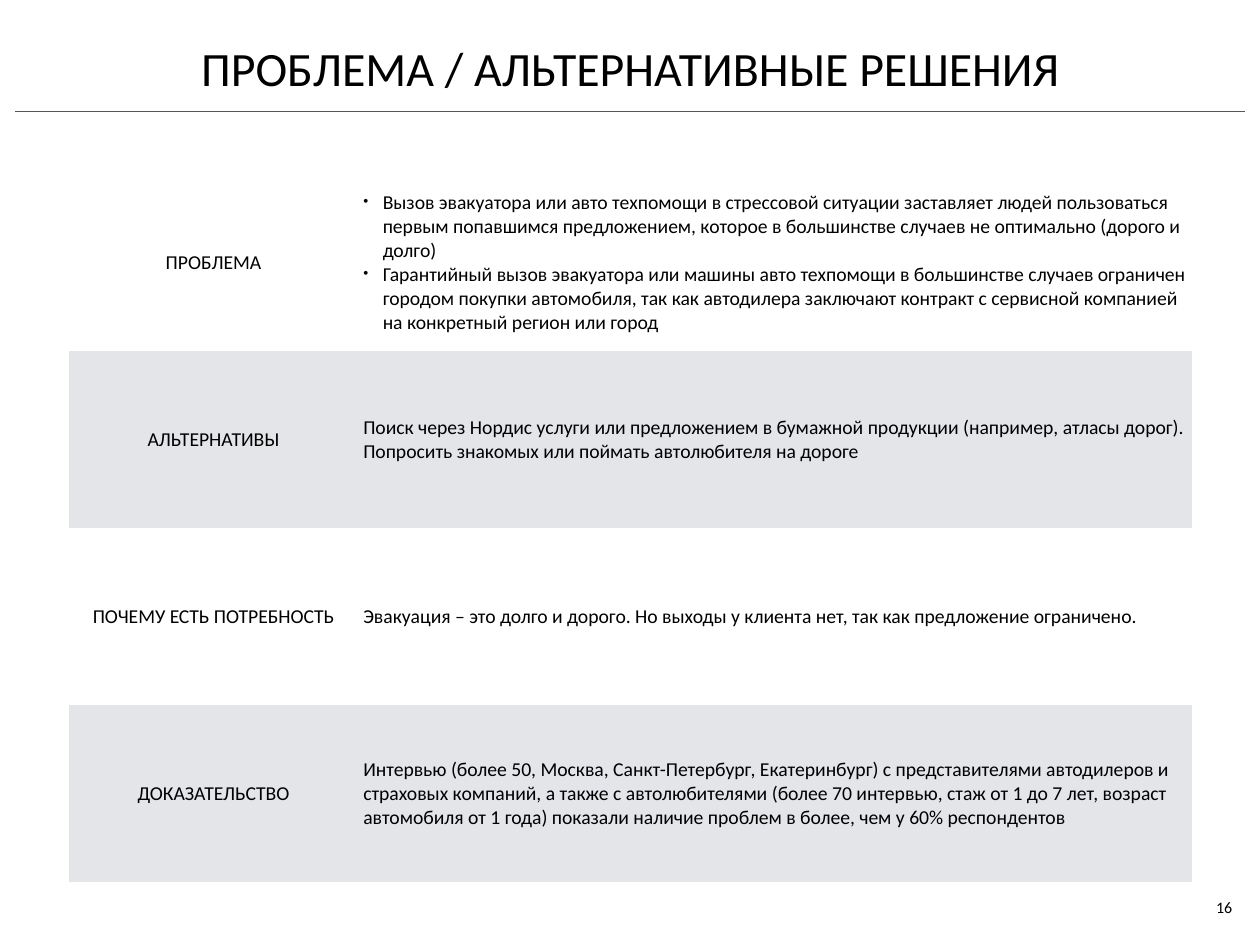
from dataclasses import dataclass

from lxml.etree import SubElement
from pptx import Presentation
from pptx.dml.color import RGBColor
from pptx.enum.shapes import MSO_CONNECTOR
from pptx.enum.text import MSO_ANCHOR, PP_ALIGN
from pptx.oxml.ns import qn
from pptx.util import Inches, Pt


@dataclass(frozen=True)
class Theme:
    font: str = "Calibri"
    ink: str = "000000"
    rule: str = "53585F"
    bands: tuple = ("FFFFFF", "E3E5E8")
    title_size: float = 38.9
    body_size: float = 16
    number_size: float = 13
    rule_width: float = 0.75
    cell_margin: float = 0.06
    bullet_indent: float = 0.22
    plain_table: str = "{2D5ABB26-0587-4C30-8999-92F81FD0307C}"


class SlideBuilder:
    def __init__(self, page, theme):
        self.page = page
        self.theme = theme

    def fill_para(self, para, text, size, align):
        para.alignment = align
        for index, line in enumerate(text.split("\n")):
            if index:
                para.add_line_break()
            span = para.add_run()
            span.text = line
            span.font.name = self.theme.font
            span.font.size = Pt(size)
            span.font.color.rgb = RGBColor.from_string(self.theme.ink)

    def bullet(self, para):
        indent = Inches(self.theme.bullet_indent)
        properties = para._p.get_or_add_pPr()
        properties.set("marL", str(indent))
        properties.set("indent", str(-indent))
        SubElement(properties, qn("a:buSzPct")).set("val", "75000")
        SubElement(properties, qn("a:buChar")).set("char", "•")

    def text(self, left, top, width, height, text, size, anchor, wrap):
        box = self.page.shapes.add_textbox(
            Inches(left), Inches(top), Inches(width), Inches(height))
        frame = box.text_frame
        frame.word_wrap = wrap
        frame.vertical_anchor = anchor
        frame.margin_left = frame.margin_right = 0
        frame.margin_top = frame.margin_bottom = 0
        self.fill_para(frame.paragraphs[0], text, size, PP_ALIGN.CENTER)

    def rule(self, left, right, top):
        line = self.page.shapes.add_connector(
            MSO_CONNECTOR.STRAIGHT,
            Inches(left), Inches(top), Inches(right), Inches(top))
        line.line.color.rgb = RGBColor.from_string(self.theme.rule)
        line.line.width = Pt(self.theme.rule_width)
        SubElement(line._element.spPr, qn("a:effectLst"))

    def cell(self, cell, lines, band, align):
        cell.fill.solid()
        cell.fill.fore_color.rgb = RGBColor.from_string(band)
        cell.vertical_anchor = MSO_ANCHOR.MIDDLE
        margin = Inches(self.theme.cell_margin)
        cell.margin_left = cell.margin_right = margin
        cell.margin_top = cell.margin_bottom = margin
        frame = cell.text_frame
        for index, line in enumerate(lines):
            para = frame.add_paragraph() if index else frame.paragraphs[0]
            self.fill_para(para, line, self.theme.body_size, align)
            if len(lines) > 1:
                self.bullet(para)

    def table(self, left, top, widths, height, rows):
        holder = self.page.shapes.add_table(
            len(rows), len(widths), Inches(left), Inches(top),
            Inches(sum(widths)), Inches(height))
        table = holder.table
        table.first_row = table.horz_banding = False
        for style in table._tbl.iter(qn("a:tableStyleId")):
            style.text = self.theme.plain_table
        for column, width in zip(table.columns, widths):
            column.width = Inches(width)
        for index, (heading, lines) in enumerate(rows):
            band = self.theme.bands[index % 2]
            self.cell(table.cell(index, 0), [heading], band, PP_ALIGN.CENTER)
            self.cell(table.cell(index, 1), lines, band, PP_ALIGN.LEFT)


ROWS = [
    ("ПРОБЛЕМА", [
        "Вызов эвакуатора или авто техпомощи в стрессовой ситуации заставляет "
        "людей пользоваться первым попавшимся предложением, которое в "
        "большинстве случаев не оптимально (дорого и долго)",
        "Гарантийный вызов эвакуатора или машины авто техпомощи в большинстве "
        "случаев ограничен городом покупки автомобиля, так как автодилера "
        "заключают контракт с сервисной компанией на конкретный регион или город",
    ]),
    ("АЛЬТЕРНАТИВЫ", [
        "Поиск через Нордис услуги или предложением в бумажной продукции "
        "(например, атласы дорог).\n"
        "Попросить знакомых или поймать автолюбителя на дороге",
    ]),
    ("ПОЧЕМУ ЕСТЬ ПОТРЕБНОСТЬ", [
        "Эвакуация – это долго и дорого. Но выходы у клиента нет, так как "
        "предложение ограничено.",
    ]),
    ("ДОКАЗАТЕЛЬСТВО", [
        "Интервью (более 50, Москва, Санкт-Петербург, Екатеринбург) с "
        "представителями автодилеров и страховых компаний, а также с "
        "автолюбителями (более 70 интервью, стаж от 1 до 7 лет, возраст "
        "автомобиля от 1 года) показали наличие проблем в более, чем у 60% "
        "респондентов",
    ]),
]


def main():
    deck = Presentation()
    deck.slide_width = Inches(14.22)
    deck.slide_height = Inches(10.67)
    theme = Theme()
    builder = SlideBuilder(deck.slides.add_slide(deck.slide_layouts[6]), theme)
    builder.rule(0.17, 14.05, 1.26)
    builder.text(0.71, 0.15, 12.81, 1.21, "ПРОБЛЕМА / АЛЬТЕРНАТИВНЫЕ РЕШЕНИЯ",
                 theme.title_size, MSO_ANCHOR.MIDDLE, True)
    builder.text(13.67, 10.13, 0.29, 0.33, "16",
                 theme.number_size, MSO_ANCHOR.TOP, False)
    builder.table(0.78, 1.97, (3.26, 9.41), 7.99, ROWS)
    deck.save("out.pptx")


if __name__ == "__main__":
    main()
